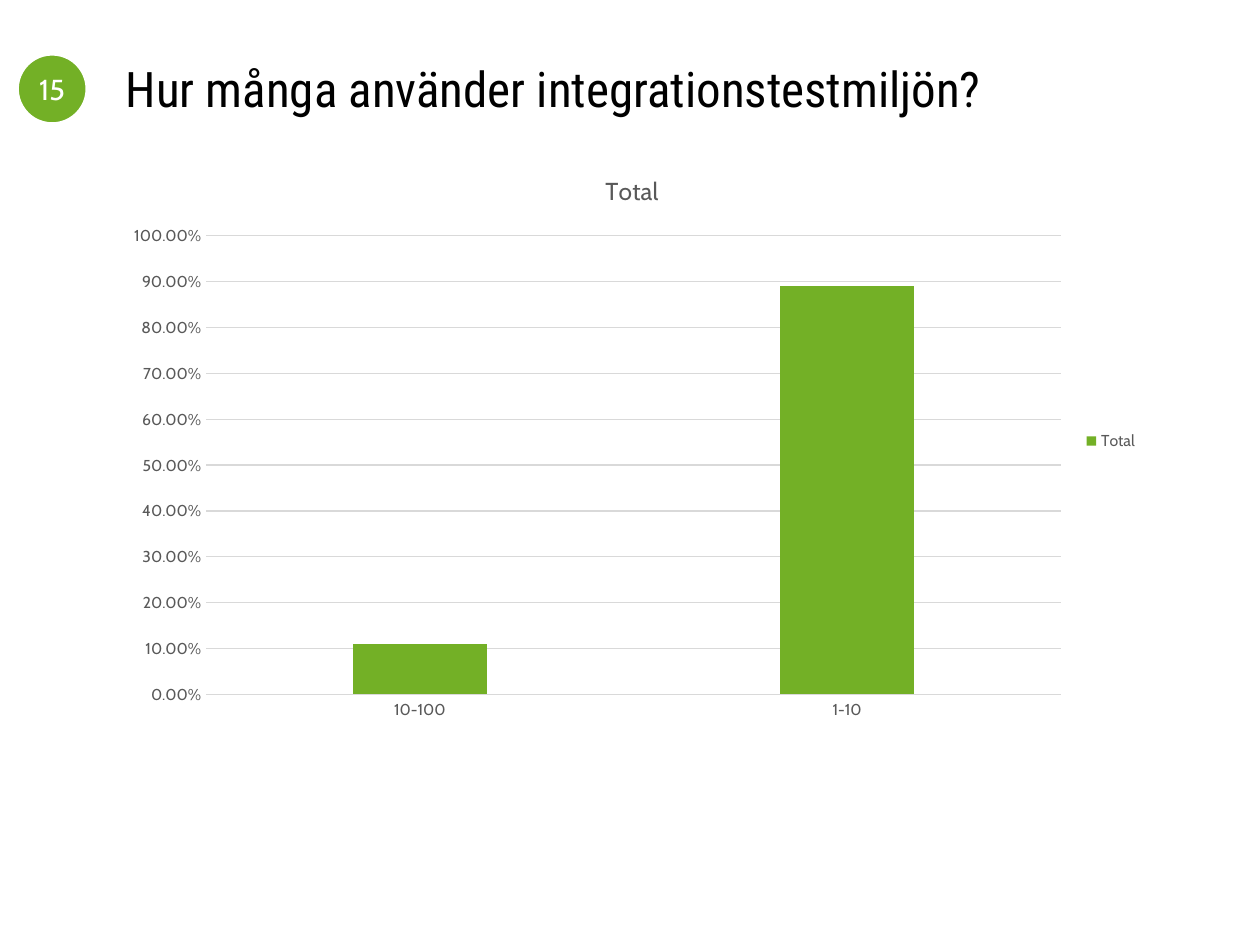
import pptx
import pptx.chart.data
import pptx.dml.color
import pptx.enum.chart
import pptx.enum.shapes
import pptx.enum.text
import pptx.util

Pt = pptx.util.Pt

TITLE = "Hur många använder integrationstestmiljön?"
PAGE_NUMBER = "15"
SERIES_NAME = "Total"
SHARES = {"10-100": 0.11, "1-10": 0.89}

COLORS = {"green": "73B026", "white": "FFFFFF", "black": "000000",
          "label": "595959", "grid": "D9D9D9"}
HEADING_FONT, BODY_FONT = "Roboto Condensed", "Cabin"

# left, top, width, height in points
BADGE_BOX = (10, 31, 39.6, 39.6)
TITLE_BOX = (64.8, 28.8, 592, 43.2)
CHART_BOX = (64.8, 86.4, 592.6, 331.2)


def rgb(name):
    return pptx.dml.color.RGBColor.from_string(COLORS[name])


def points(box):
    return [Pt(length) for length in box]


def style_font(font, size, color, name=BODY_FONT):
    font.size, font.name, font.bold = Pt(size), name, False
    font.color.rgb = rgb(color)


def style_line(line, color, width):
    line.color.rgb = rgb(color)
    line.width = Pt(width)


def write(frame, text, size, color, font=BODY_FONT, align="LEFT", margins=(7.2, 3.6)):
    """Fill a text frame with one middle-anchored paragraph."""
    frame.word_wrap = True
    frame.vertical_anchor = pptx.enum.text.MSO_ANCHOR.MIDDLE
    frame.margin_left = frame.margin_right = Pt(margins[0])
    frame.margin_top = frame.margin_bottom = Pt(margins[1])
    para = frame.paragraphs[0]
    para.alignment = pptx.enum.text.PP_ALIGN[align]
    span = para.add_run()
    span.text = text
    style_font(span.font, size, color, font)


def add_badge(page):
    badge = page.shapes.add_shape(pptx.enum.shapes.MSO_SHAPE.OVAL, *points(BADGE_BOX))
    badge.shadow.inherit = False
    badge.fill.solid()
    badge.fill.fore_color.rgb = rgb("green")
    style_line(badge.line, "white", 1.5)
    write(badge.text_frame, PAGE_NUMBER, 16.5, "white", align="CENTER", margins=(0.7, 0.7))


def add_share_chart(page):
    data = pptx.chart.data.CategoryChartData(number_format="0.00%")
    data.categories = list(SHARES)
    data.add_series(SERIES_NAME, list(SHARES.values()))
    chart = page.shapes.add_chart(pptx.enum.chart.XL_CHART_TYPE.COLUMN_CLUSTERED,
                                  *points(CHART_BOX), data).chart
    style_font(chart.font, 10, "black")

    chart.has_title = True
    heading = chart.chart_title.text_frame.paragraphs[0].add_run()
    heading.text = SERIES_NAME
    style_font(heading.font, 14, "label")
    chart.chart_title.include_in_layout = False

    chart.has_legend = True
    chart.legend.position = pptx.enum.chart.XL_LEGEND_POSITION.RIGHT
    chart.legend.include_in_layout = False
    style_font(chart.legend.font, 9, "label")

    plot = chart.plots[0]
    plot.gap_width, plot.overlap = 219, -27
    plot.vary_by_categories = False
    bars = plot.series[0].format
    bars.fill.solid()
    bars.fill.fore_color.rgb = rgb("green")

    for axis in (chart.category_axis, chart.value_axis):
        axis.major_tick_mark = axis.minor_tick_mark = pptx.enum.chart.XL_TICK_MARK.NONE
        style_font(axis.tick_labels.font, 9, "label")
    style_line(chart.category_axis.format.line, "grid", 0.75)
    shares = chart.value_axis
    shares.minimum_scale, shares.maximum_scale, shares.major_unit = 0, 1, 0.1
    shares.format.line.fill.background()
    shares.has_major_gridlines = True
    style_line(shares.major_gridlines.format.line, "grid", 0.75)
    shares.tick_labels.number_format = "0.00%"
    shares.tick_labels.number_format_is_linked = False


def main():
    deck = pptx.Presentation()
    deck.slide_width, deck.slide_height = Pt(720), Pt(540)
    page = deck.slides.add_slide(deck.slide_layouts[6])
    add_badge(page)
    title = page.shapes.add_textbox(*points(TITLE_BOX))
    write(title.text_frame, TITLE, 28, "black", font=HEADING_FONT)
    add_share_chart(page)
    deck.save("out.pptx")


if __name__ == "__main__":
    main()
